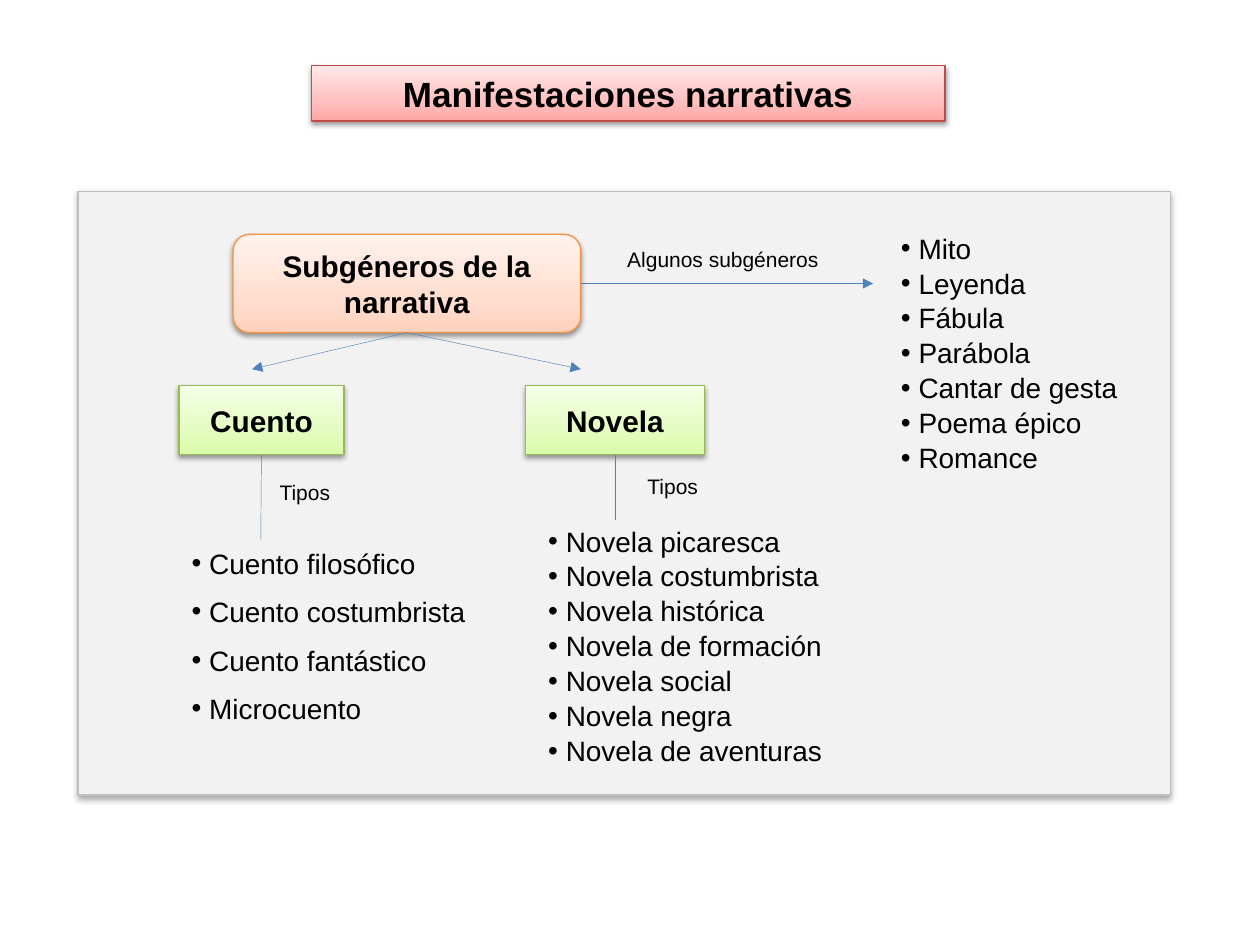
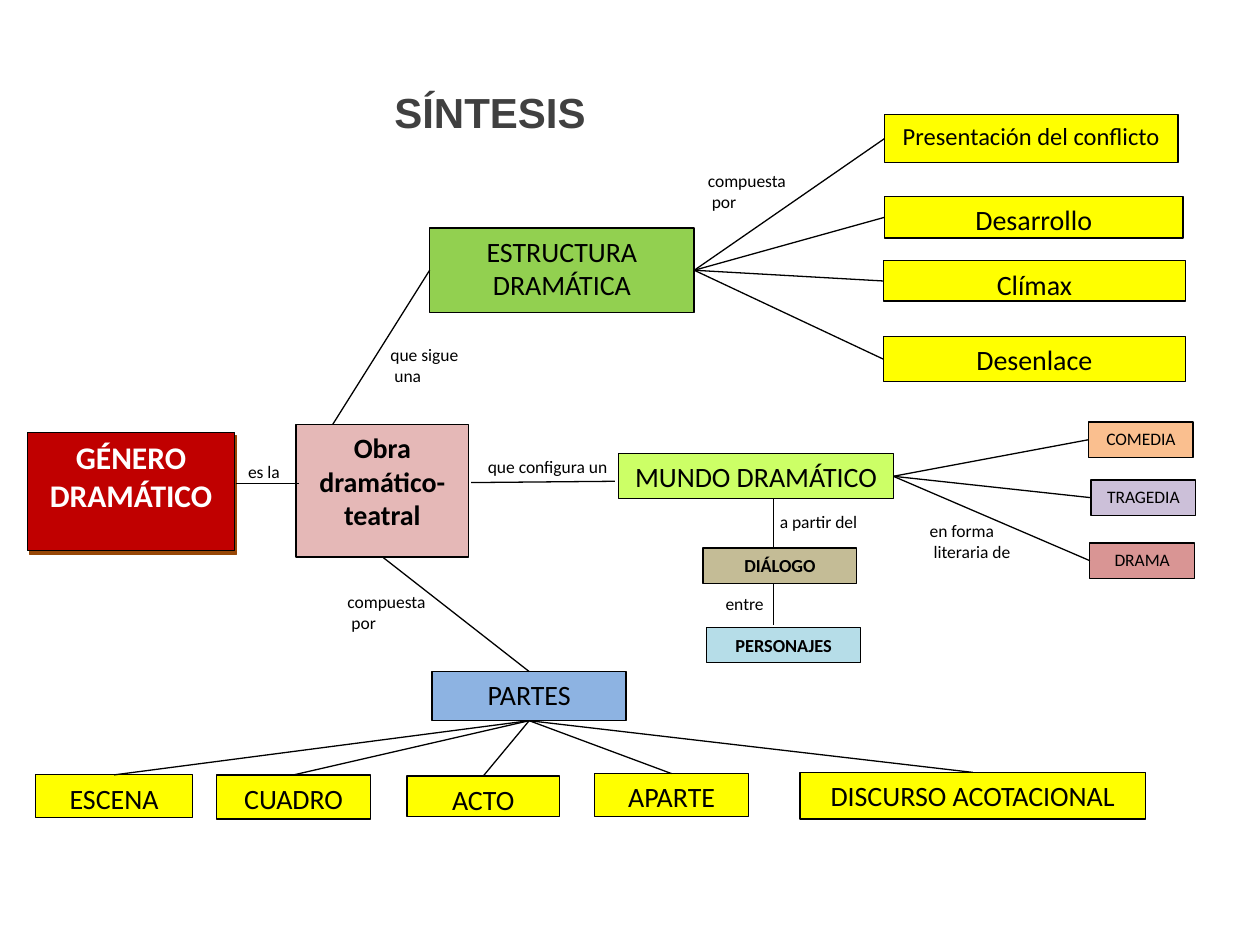
"""Build two concept maps: narrative subgenres and the dramatic genre."""
from copy import deepcopy

from pptx import Presentation
from pptx.dml.color import RGBColor
from pptx.enum.shapes import MSO_CONNECTOR, MSO_SHAPE
from pptx.enum.text import MSO_ANCHOR, MSO_AUTO_SIZE, PP_ALIGN
from pptx.oxml.ns import qn
from pptx.oxml.xmlchemy import OxmlElement
from pptx.util import Pt

PX = 9144
RECT, ROUNDED = MSO_SHAPE.RECTANGLE, MSO_SHAPE.ROUNDED_RECTANGLE
STRAIGHT = MSO_CONNECTOR.STRAIGHT
LEFT, CENTER = PP_ALIGN.LEFT, PP_ALIGN.CENTER
TOP, MIDDLE = MSO_ANCHOR.TOP, MSO_ANCHOR.MIDDLE
FIXED = MSO_AUTO_SIZE.NONE
SIDE_TOP, SIDE_LEFT, SIDE_BOTTOM, SIDE_RIGHT = range(4)
COMPARISON, TITLE_ONLY = 4, 5

BLACK, WHITE, YELLOW, BLUE = "000000", "FFFFFF", "FFFF00", "4F81BD"
PINK = ("FFA6A5", "FFC0BF", "FFE7E7")
PEACH = ("FFD2BD", "FFDED0", "FFF2ED")
GREEN = ("DAFDA7", "E4FCC2", "F5FFE7")
SOFT_SHADOW = (BLACK, 38, 3.1, 1.6, 90)
PANEL_SHADOW = (BLACK, 35, 3.1, 1.8, 90)
HARD_SHADOW = ("974706", 100, 0, 2.2, 63)


def color(value):
    return RGBColor.from_string(value)


def add_child(parent, tag, **attributes):
    child = OxmlElement(tag)
    for name, value in attributes.items():
        child.set(name, str(value))
    parent.append(child)
    return child


class MapPage:
    def __init__(self, deck, layout, font):
        self.page = deck.slides.add_slide(deck.slide_layouts[layout])
        self.shapes = self.page.shapes
        self.font = font

    def place(self, box, area):
        box.left, box.top, box.width, box.height = (value * PX for value in area)

    def set_text(self, box, text, size, ink=BLACK, bold=False, align=CENTER,
                 anchor=TOP, wrap=True, font=None):
        frame = box.text_frame
        frame.text = text
        frame.word_wrap = wrap
        frame.auto_size = FIXED
        frame.vertical_anchor = anchor
        for para in frame.paragraphs:
            para.alignment = align
            for span in para.runs:
                span.font.name = font or self.font
                span.font.size = Pt(size)
                span.font.bold = bold
                span.font.color.rgb = color(ink)

    def paint(self, box, fill, line, weight=0.75, shadow=None):
        box.shadow.inherit = False
        if isinstance(fill, tuple):
            box.fill.gradient()
            box.fill.gradient_angle = 90
            stops = box.element.spPr.find(qn("a:gradFill")).find(qn("a:gsLst"))
            stops.insert(1, deepcopy(stops[0]))
            for stop, position, shade in zip(box.fill.gradient_stops, (0, 0.35, 1), fill):
                stop.position = position
                stop.color.rgb = color(shade)
        else:
            box.fill.solid()
            box.fill.fore_color.rgb = color(fill)
        box.line.color.rgb = color(line)
        box.line.width = Pt(weight)
        if shadow:
            tint, alpha, blur, distance, angle = shadow
            effects = box.element.spPr.find(qn("a:effectLst"))
            outer = add_child(effects, "a:outerShdw", blurRad=Pt(blur), dist=Pt(distance),
                              dir=angle * 60000, rotWithShape=0)
            shade = add_child(outer, "a:srgbClr", val=tint)
            add_child(shade, "a:alpha", val=alpha * 1000)

    def title(self, text, area, size, **style):
        box = self.shapes.title
        self.place(box, area)
        self.set_text(box, text, size, bold=True, anchor=MIDDLE, font="Arial", **style)
        return box

    def box(self, area, fill, text="", size=16, line=BLACK, weight=0.75,
            shadow=None, kind=RECT, **style):
        shape = self.shapes.add_shape(kind, *(value * PX for value in area))
        self.paint(shape, fill, line, weight, shadow)
        if text:
            self.set_text(shape, text, size, **style)
        return shape

    def label(self, area, text, size=10, align=LEFT, **style):
        box = self.shapes.add_textbox(*(value * PX for value in area))
        self.set_text(box, text, size, align=align, **style)

    def bullets(self, box, area, items, gap, bottom=5):
        self.shapes.element.append(box.element)
        self.place(box, area)
        self.set_text(box, "\n".join(items), 16, align=LEFT, anchor=MIDDLE)
        box.text_frame.margin_bottom = bottom * PX
        for number, para in enumerate(box.text_frame.paragraphs):
            settings = para._p.get_or_add_pPr()
            settings.set("marL", str(14 * PX))
            settings.set("indent", str(-14 * PX))
            add_child(settings, "a:buFont", typeface="Arial")
            add_child(settings, "a:buChar", char="•")
            para.space_before = Pt(gap if number else 0)

    def line(self, start, end, ink=BLACK, weight=0.75, arrow=False):
        connector = self.shapes.add_connector(STRAIGHT, 0, 0, 0, 0)
        if isinstance(start[0], int):
            connector.begin_x, connector.begin_y = (value * PX for value in start)
        else:
            connector.begin_connect(*start)
        if isinstance(end[0], int):
            connector.end_x, connector.end_y = (value * PX for value in end)
        else:
            connector.end_connect(*end)
        connector.line.color.rgb = color(ink)
        connector.line.width = Pt(weight)
        if arrow:
            add_child(connector.line._get_or_add_ln(), "a:tailEnd", type="triangle")
        add_child(connector.element.spPr, "a:effectLst")


def build_narrative(deck):
    page = MapPage(deck, COMPARISON, "Arial")
    title = page.title("Manifestaciones narrativas", (247, 52, 503, 44), 20)
    page.paint(title, PINK, "BF4C48", shadow=SOFT_SHADOW)
    page.box((62, 152, 867, 479), "F2F2F2", line="BFBFBF", shadow=PANEL_SHADOW)

    heading = {"size": 17, "bold": True, "anchor": MIDDLE, "shadow": SOFT_SHADOW}
    subgenres = page.box((185, 186, 276, 78), PEACH, "Subgéneros de la\nnarrativa",
                         line="F69240", kind=ROUNDED, **heading)
    tale = page.box((142, 306, 131, 55), GREEN, "Cuento", line="98B955", **heading)
    novel = page.box((417, 306, 142, 55), GREEN, "Novela", line="98B955", **heading)

    for area, text in (
        ((488, 191, 173, 30), "Algunos subgéneros"),
        ((212, 376, 61, 30), "Tipos"),
        ((504, 371, 61, 30), "Tipos"),
    ):
        page.label(area, text, 12, wrap=False)

    bodies = list(page.page.placeholders)[1:]
    lists = (
        ((705, 215, 213, 157), 0.8, 32,
         ("Mito", "Leyenda", "Fábula", "Parábola", "Cantar de gesta", "Poema épico",
          "Romance")),
        ((142, 412, 240, 185), 8.5, 5,
         ("Cuento filosófico", "Cuento costumbrista", "Cuento fantástico", "Microcuento")),
        ((425, 408, 268, 209), 0.8, 5,
         ("Novela picaresca", "Novela costumbrista", "Novela histórica",
          "Novela de formación", "Novela social", "Novela negra", "Novela de aventuras")),
    )
    for body, (area, gap, bottom, items) in zip(bodies, lists):
        page.bullets(body, area, items, gap, bottom)
    for body in bodies[len(lists):]:
        page.shapes.element.remove(body.element)

    for start, end, arrow in (
        ((subgenres, SIDE_RIGHT), (693, 225), True),
        ((subgenres, SIDE_BOTTOM), (461, 293), True),
        ((subgenres, SIDE_BOTTOM), (200, 293), True),
        ((novel, SIDE_BOTTOM), (488, 413), False),
        ((tale, SIDE_BOTTOM), (207, 428), False),
    ):
        page.line(start, end, BLUE, 0.25, arrow)


def build_drama(deck):
    page = MapPage(deck, TITLE_ONLY, "Calibri")
    page.title("SÍNTESIS", (303, 64, 173, 50), 24, ink="404040", align=LEFT, wrap=False)
    page.line((614, 395), (614, 496))

    page.box((22, 343, 164, 94), "C00000", "GÉNERO\nDRAMÁTICO", 18, weight=0.25,
             shadow=HARD_SHADOW, ink=WHITE, bold=True)
    structure = page.box((341, 181, 210, 67), "92D050", "ESTRUCTURA DRAMÁTICA")
    parts = page.box((343, 533, 154, 39), "8DB3E2", "PARTES")
    work = page.box((235, 337, 137, 105), "E5B8B7", "Obra dramático-teatral", bold=True)
    world = page.box((491, 360, 218, 36), "CCFF66", "MUNDO DRAMÁTICO")
    page.box((558, 435, 122, 28), "C4BC96", "DIÁLOGO", 10.5, bold=True)
    page.box((561, 498, 122, 28), "B6DDE8", "PERSONAJES", 10.5, bold=True)

    branches = (
        (structure, SIDE_RIGHT, SIDE_LEFT, (
            ((702, 91, 233, 38), YELLOW, "Presentación del conflicto", 14),
            ((702, 156, 237, 33), YELLOW, "Desarrollo", 16),
            ((701, 207, 240, 32), YELLOW, "Clímax", 16),
            ((701, 267, 240, 36), YELLOW, "Desenlace", 16),
        )),
        (world, SIDE_RIGHT, SIDE_LEFT, (
            ((864, 335, 83, 28), "FABF8F", "COMEDIA", 10),
            ((866, 381, 83, 28), "CCC0D9", "TRAGEDIA", 10),
            ((865, 431, 83, 28), "D99594", "DRAMA", 10),
        )),
        (parts, SIDE_BOTTOM, SIDE_TOP, (
            ((28, 615, 125, 34), YELLOW, "ESCENA", 16),
            ((172, 615, 122, 35), YELLOW, "CUADRO", 16),
            ((323, 616, 121, 32), YELLOW, "ACTO", 16),
            ((472, 614, 122, 34), YELLOW, "APARTE", 16),
            ((635, 613, 274, 37), YELLOW, "DISCURSO ACOTACIONAL", 16),
        )),
    )
    for source, exit_side, entry_side, leaves in branches:
        for leaf in leaves:
            page.line((source, exit_side), (page.box(*leaf), entry_side))

    page.line((187, 384), (237, 384))
    page.line((374, 383), (488, 382))
    page.line((work, SIDE_BOTTOM), (parts, SIDE_TOP))
    page.line((264, 337), (structure, SIDE_LEFT))

    for area, text, align in (
        ((728, 408, 89, 43), "en forma\n literaria de", LEFT),
        ((329, 357, 211, 28), "que configura un", CENTER),
        ((552, 130, 86, 28), "compuesta\n por", LEFT),
        ((104, 361, 211, 28), "es la", CENTER),
        ((609, 401, 88, 27), "a partir del", LEFT),
        ((561, 466, 60, 27), "entre", CENTER),
        ((266, 464, 83, 41), "compuesta\n por", LEFT),
        ((300, 268, 81, 43), "que sigue\n una", LEFT),
    ):
        page.label(area, text, align=align)


def main():
    deck = Presentation()
    deck.slide_width, deck.slide_height = 1000 * PX, 750 * PX
    build_narrative(deck)
    build_drama(deck)
    deck.save("out.pptx")


if __name__ == "__main__":
    main()
